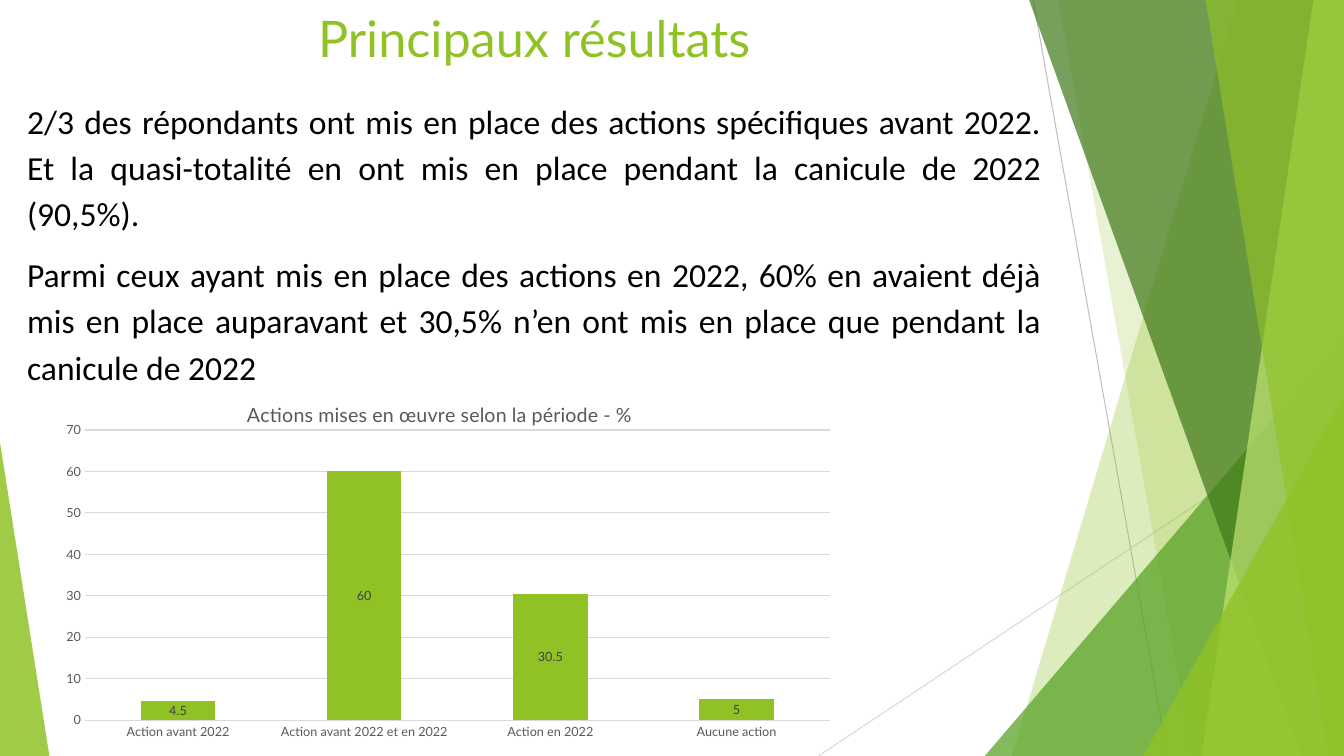
from lxml import etree
from pptx import Presentation
from pptx import util as u
from pptx.chart import data as chart_data
from pptx.dml import color
from pptx.enum import chart as chart_enum
from pptx.enum import shapes, text
from pptx.oxml import ns

COLUMNS, ROWS = 160, 90
CELL = u.Inches(7.5) // ROWS
COLORS = {
    "lime": "90C226", "green": "54A021", "forest": "3F7819", "pale": "C0E474",
    "black": "000000", "gray": "595959", "label": "404040",
    "line": "BFBFBF", "grid": "D9D9D9",
}
RAYS = [((123, 0), (139, ROWS), "line"), ((COLUMNS, 48.36), (97.44, ROWS), "grid")]
FACETS = [
    ("band", 147.36, 120.48, "lime", 30),
    ("band", 126, 141.96, "lime", 20),
    ("triangle", (117.24, 39.96, 42.76, 50.04), 1, "green", 72),
    ("band", 122.52, 154.92, "forest", 70),
    ("band", 156.36, 143.04, "pale", 70),
    ("band", 143.52, 158.16, "lime", 65),
    ("triangle", (136.08, 47.16, 23.92, 42.84), 1, "lime", 80),
    ("triangle", (0, 52.68, 5.88, 37.32), 0, "lime", 85),
]
TITLE = ["Principaux résultats"]
FINDINGS = [
    "2/3 des répondants ont mis en place des actions spécifiques avant 2022. "
    "Et la quasi-totalité en ont mis en place pendant la canicule de 2022 (90,5%).",
    "Parmi ceux ayant mis en place des actions en 2022, 60% en avaient déjà mis en place "
    "auparavant et 30,5% n’en ont mis en place que pendant la canicule de 2022",
]
CHART_TITLE = "Actions mises en œuvre selon la période - %"
ACTIONS = {
    "Action avant 2022": 4.5,
    "Action avant 2022 et en 2022": 60,
    "Action en 2022": 30.5,
    "Aucune action": 5,
}


def rgb(name):
    return color.RGBColor.from_string(COLORS[name])


def grid(*cells):
    return [round(cell * CELL) for cell in cells]


def apply(target, **values):
    for name, value in values.items():
        setattr(target, name, value)


def set_font(font, name, size, color_name):
    apply(font, name=name, size=u.Pt(size), bold=False)
    font.color.rgb = rgb(color_name)


def add_ray(slide, start, end, color_name):
    ray = slide.shapes.add_connector(shapes.MSO_CONNECTOR.STRAIGHT, *grid(*start, *end))
    ray.line.width = u.Pt(0.75)
    ray.line.color.rgb = rgb(color_name)
    etree.SubElement(ray.element.spPr, ns.qn("a:effectLst"))


def paint(shape, color_name, opacity):
    shape.shadow.inherit = False
    shape.fill.solid()
    shape.fill.fore_color.rgb = rgb(color_name)
    shape.line.fill.background()
    fill = shape.element.spPr.find(ns.qn("a:solidFill"))
    etree.SubElement(fill[0], ns.qn("a:alpha"), val=str(opacity * 1000))


def add_band(slide, top_left, bottom_left):
    """Draw a facet that runs from its slanted left edge to the slide's right edge."""
    builder = slide.shapes.build_freeform(*grid(top_left, 0))
    corners = [(COLUMNS, 0), (COLUMNS, ROWS), (bottom_left, ROWS)]
    builder.add_line_segments([grid(*corner) for corner in corners])
    return builder.convert_to_shape()


def add_triangle(slide, box, apex):
    triangle = slide.shapes.add_shape(shapes.MSO_SHAPE.ISOSCELES_TRIANGLE, *grid(*box))
    triangle.adjustments[0] = apex
    return triangle


def add_text(slide, box, lines, font, **paragraph_format):
    frame = slide.shapes.add_textbox(*grid(*box)).text_frame
    apply(frame, word_wrap=True, text="\n".join(lines))
    for paragraph in frame.paragraphs:
        apply(paragraph, **paragraph_format)
        set_font(paragraph.runs[0].font, *font)


def set_layout(parent, after, **values):
    """Place a chart part by shares of the chart's size."""
    for old in parent.findall(ns.qn("c:layout")):
        parent.remove(old)
    layout = etree.Element(ns.qn("c:layout"))
    manual = etree.SubElement(layout, ns.qn("c:manualLayout"))
    for name, value in values.items():
        etree.SubElement(manual, ns.qn(f"c:{name}"), val=str(value))
    parent.insert(after, layout)


def style_axis(axis):
    none = chart_enum.XL_TICK_MARK.NONE
    apply(axis, major_tick_mark=none, minor_tick_mark=none)
    set_font(axis.tick_labels.font, "Lato", 9, "gray")


def style_line(line):
    line.width = u.Pt(0.75)
    line.color.rgb = rgb("grid")


def add_action_chart(slide, box):
    values = chart_data.CategoryChartData()
    values.categories = list(ACTIONS)
    values.add_series("Series 1", list(ACTIONS.values()))
    kind = chart_enum.XL_CHART_TYPE.COLUMN_STACKED
    chart = slide.shapes.add_chart(kind, *grid(*box), values).chart
    apply(chart, has_legend=False, has_title=True)
    set_font(chart.font, "Lato", 10, "black")
    title = chart.chart_title
    title.text_frame.text = CHART_TITLE
    title.include_in_layout = False
    set_font(title.text_frame.paragraphs[0].runs[0].font, "Lato", 14, "gray")
    set_layout(title._element, 1, xMode="edge", yMode="edge", x=0.25, y=0.05)
    set_layout(chart.plots[0]._element.getparent(), 0, layoutTarget="inner",
               xMode="edge", yMode="edge", x=0.05, y=0.14, w=0.94, h=0.78)

    style_axis(chart.category_axis)
    style_axis(chart.value_axis)
    style_line(chart.category_axis.format.line)
    style_line(chart.value_axis.major_gridlines.format.line)
    chart.value_axis.format.line.fill.background()
    apply(chart.value_axis, minimum_scale=0, maximum_scale=70, major_unit=10)

    plot = chart.plots[0]
    apply(plot, gap_width=150, overlap=100, vary_by_categories=False)
    bars = plot.series[0]
    bars.format.fill.solid()
    bars.format.fill.fore_color.rgb = rgb("lime")
    center = chart_enum.XL_LABEL_POSITION.CENTER
    apply(bars.data_labels, show_value=True, position=center)
    set_font(bars.data_labels.font, "Lato", 9, "label")


def main():
    presentation = Presentation()
    apply(presentation, slide_width=COLUMNS * CELL, slide_height=ROWS * CELL)
    slide = presentation.slides.add_slide(presentation.slide_layouts[6])
    for ray in RAYS:
        add_ray(slide, *ray)
    builders = {"band": add_band, "triangle": add_triangle}
    for kind, first, second, color_name, opacity in FACETS:
        paint(builders[kind](slide, first, second), color_name, opacity)
    add_text(slide, (7.2, 0.24, 112.8, 10.44), TITLE, ("Lato", 36, "lime"),
             alignment=text.PP_ALIGN.CENTER)
    add_text(slide, (2.04, 10.68, 123.12, 42), FINDINGS, ("Calibri", 24, "black"),
             alignment=text.PP_ALIGN.JUSTIFY, line_spacing=1.15, space_after=u.Pt(10))
    add_action_chart(slide, (5.4, 45, 94.32, 44.28))
    presentation.save("out.pptx")


if __name__ == "__main__":
    main()
